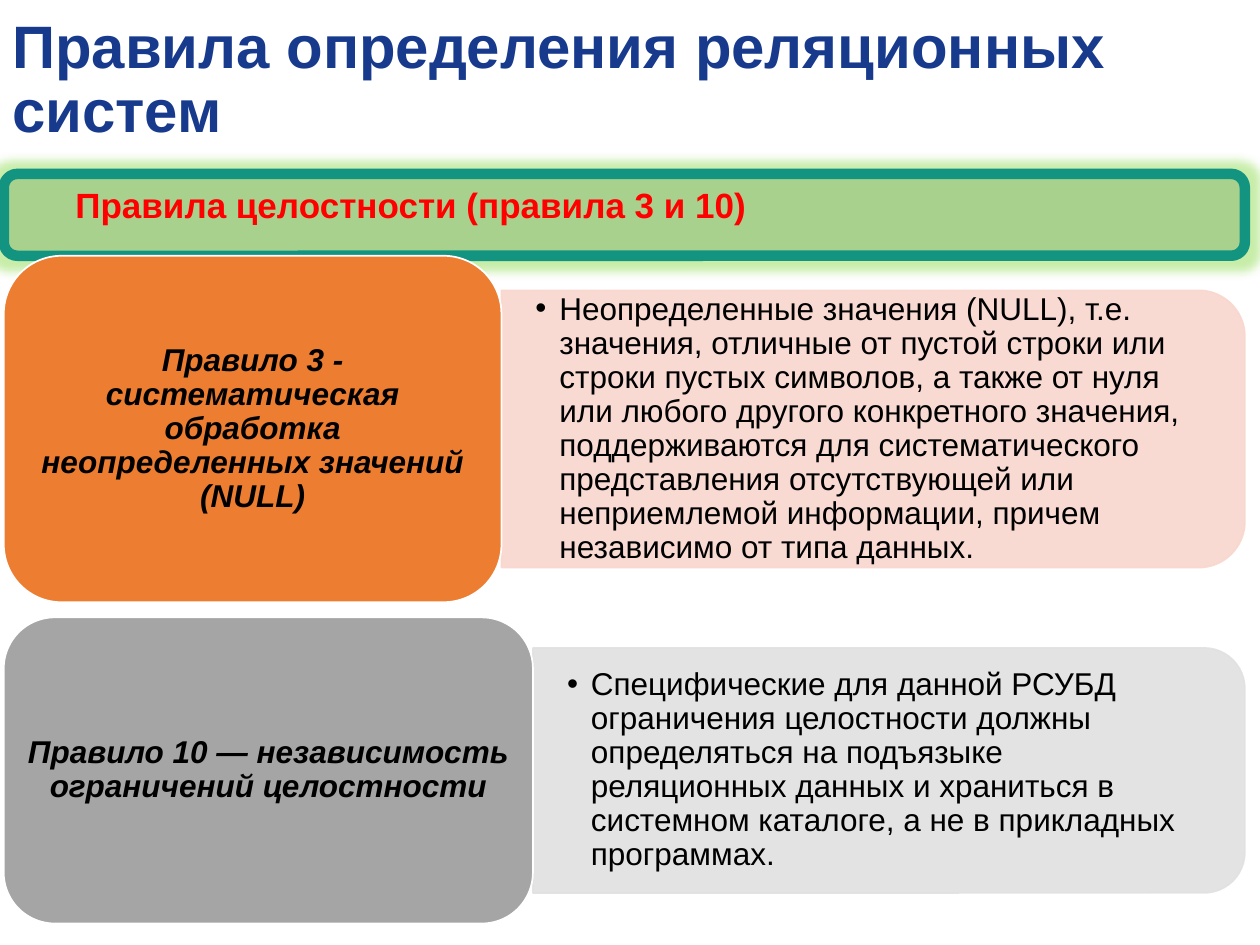
import pptx
import pptx.util
import pptx.dml.color
import pptx.enum.shapes
import pptx.enum.text
import pptx.oxml.ns
import lxml.etree
from dataclasses import dataclass

Inches = pptx.util.Inches
Pt = pptx.util.Pt
qn = pptx.oxml.ns.qn
Kind = pptx.enum.shapes.MSO_SHAPE
Align = pptx.enum.text.PP_ALIGN
Anchor = pptx.enum.text.MSO_ANCHOR


@dataclass
class Theme:
    font: str = "Arial"
    title: str = "173A8D"
    head: str = "FF0000"
    text: str = "000000"
    bar: str = "A9D18E"
    edge: str = "129481"
    glow: str = "75D329"
    white: str = "FFFFFF"
    big: float = 34.2
    mid: float = 20
    small: float = 18


def color(value):
    return pptx.dml.color.RGBColor.from_string(value)


def add(parent, tag, **attrs):
    return lxml.etree.SubElement(parent, qn(tag), attrs)


def write(frame, text, *, font, size, ink, bold=False, italic=False,
          align=Align.LEFT, space=None, first=0, hang=0):
    para = frame.paragraphs[0]
    props = para._p.get_or_add_pPr()
    if hang:
        props.set("marL", str(Inches(hang)))
        props.set("indent", str(-Inches(hang)))
        add(props, "a:buFont", typeface=font)
        add(props, "a:buChar", char="•")
    elif first:
        props.set("indent", str(Inches(first)))
    para.alignment = align
    if space:
        para.line_spacing = space
    run = para.add_run()
    run.text = text
    run.font.name = font
    run.font.size = Pt(size)
    run.font.bold = bold
    run.font.italic = italic
    run.font.color.rgb = color(ink)


class Deck:
    def __init__(self, theme):
        self.theme = theme
        self.file = pptx.Presentation()
        self.file.slide_width = Inches(10)
        self.file.slide_height = Inches(7.5)
        self.slide = self.file.slides.add_slide(self.file.slide_layouts[6])

    def shape(self, kind, box, fill, line, width=1):
        item = self.slide.shapes.add_shape(kind, *map(Inches, box))
        item.fill.solid()
        item.fill.fore_color.rgb = color(fill)
        item.line.color.rgb = color(line)
        item.line.width = Pt(width)
        item.shadow.inherit = False
        return item

    def text(self, box, text, pad=(0.1, 0.05), anchor=Anchor.MIDDLE, **style):
        frame = self.slide.shapes.add_textbox(*map(Inches, box)).text_frame
        frame.word_wrap = True
        frame.vertical_anchor = anchor
        frame.margin_left = frame.margin_right = Inches(pad[0])
        frame.margin_top = frame.margin_bottom = Inches(pad[1])
        write(frame, text, font=self.theme.font, **style)

    def bar(self, box):
        item = self.shape(Kind.ROUNDED_RECTANGLE, box,
                          self.theme.bar, self.theme.edge, 6)
        effect = item._element.spPr.find(qn("a:effectLst"))
        glow = add(effect, "a:glow", rad=str(Pt(11)))
        tint = add(glow, "a:srgbClr", val=self.theme.glow)
        add(tint, "a:alpha", val="40000")

    def panel(self, box, fill, text):
        left, top, wide, high = box
        turned = (left + (wide - high) / 2, top + (high - wide) / 2, high, wide)
        item = self.shape(Kind.ROUND_2_SAME_RECTANGLE, turned, fill, fill)
        item.rotation = 90
        for tint in item._element.spPr.iter(qn("a:srgbClr")):
            add(tint, "a:alpha", val="90000")
        self.text((left, top + 0.1, wide - 0.1, high - 0.2), text,
                  pad=(0.27, 0.14), size=self.theme.small,
                  ink=self.theme.text, space=0.9, hang=0.19)

    def label(self, box, fill, text):
        left, top, wide, high = box
        self.shape(Kind.ROUNDED_RECTANGLE, box, fill, self.theme.white)
        gap = 0.05 * high
        self.text((left + gap, top + gap, wide - 2 * gap, high - 2 * gap), text,
                  pad=(0.07, 0.04), size=self.theme.small, ink=self.theme.text,
                  bold=True, italic=True, align=Align.CENTER, space=0.9)


def main():
    theme = Theme()
    deck = Deck(theme)
    deck.bar((0.03, 1.38, 9.85, 0.65))
    deck.text((0, 0.11, 10, 1.07), "Правила определения реляционных систем",
              size=theme.big, ink=theme.title, bold=True, space=0.9)
    deck.text((0, 1.41, 9.91, 0.7), "Правила целостности (правила 3 и 10)",
              anchor=Anchor.TOP, size=theme.mid, ink=theme.head, bold=True,
              align=Align.JUSTIFY, first=0.5)

    rules = [
        (2.03, 2.75, 3.95, "ED7D31", "F8D7CE",
         "Правило 3 - систематическая обработка неопределенных значений (NULL)",
         "Неопределенные значения (NULL), т.е. значения, отличные от пустой "
         "строки или строки пустых символов, а также от нуля или любого другого "
         "конкретного значения, поддерживаются для систематического "
         "представления отсутствующей или неприемлемой информации, причем "
         "независимо от типа данных."),
        (4.9, 2.43, 4.2, "A5A5A5", "E1E1E1",
         "Правило 10 — независимость ограничений целостности",
         "Специфические для данной РСУБД ограничения целостности должны "
         "определяться на подъязыке реляционных данных и храниться в системном "
         "каталоге, а не в прикладных программах."),
    ]
    left, right = 0.03, 9.88
    for top, high, wide, dark, light, name, body in rules:
        start = left + wide
        deck.panel((start, top + 0.1 * high, right - start, 0.8 * high),
                   light, body)
        deck.label((left, top, wide, high), dark, name)
    deck.file.save("out.pptx")


if __name__ == "__main__":
    main()
